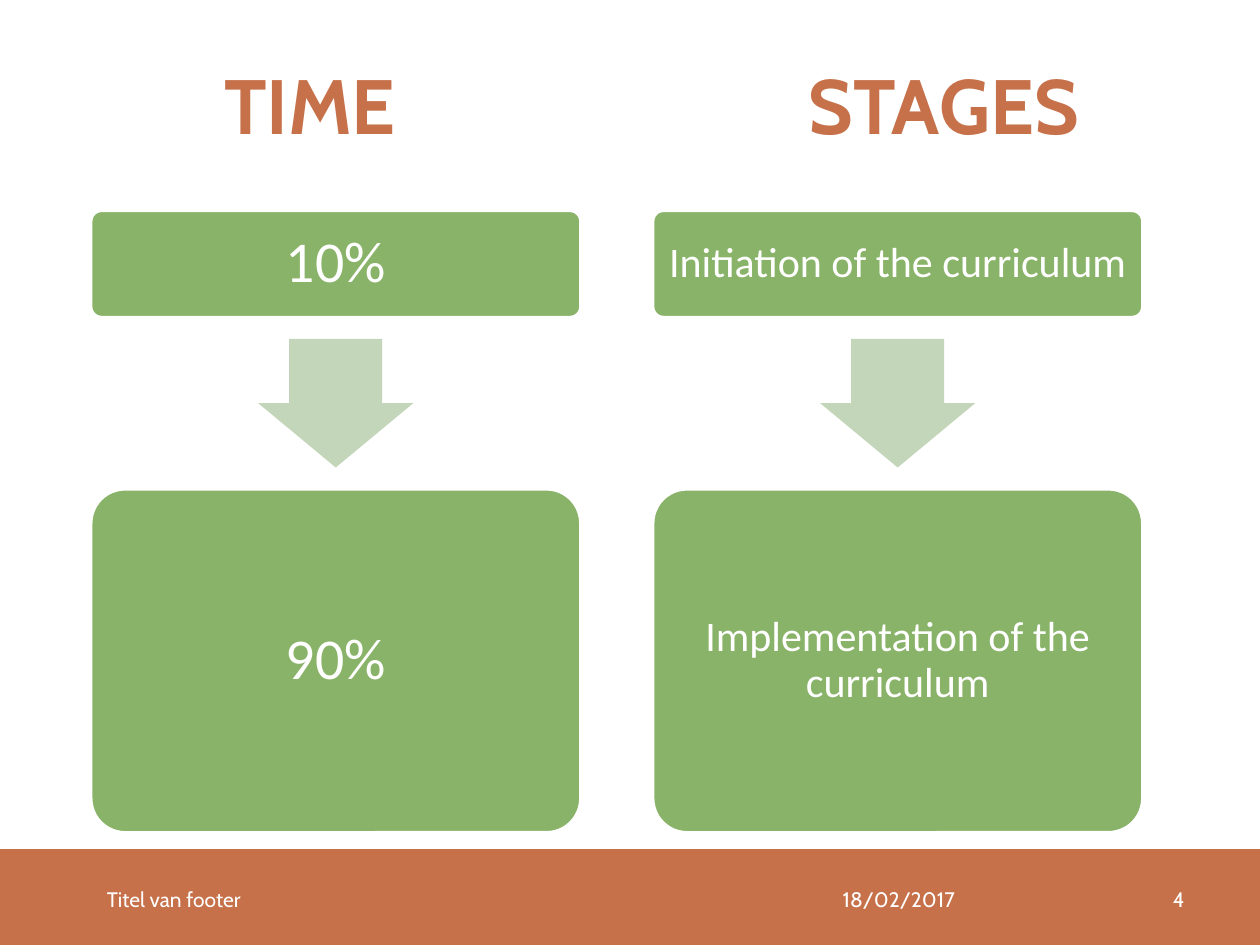
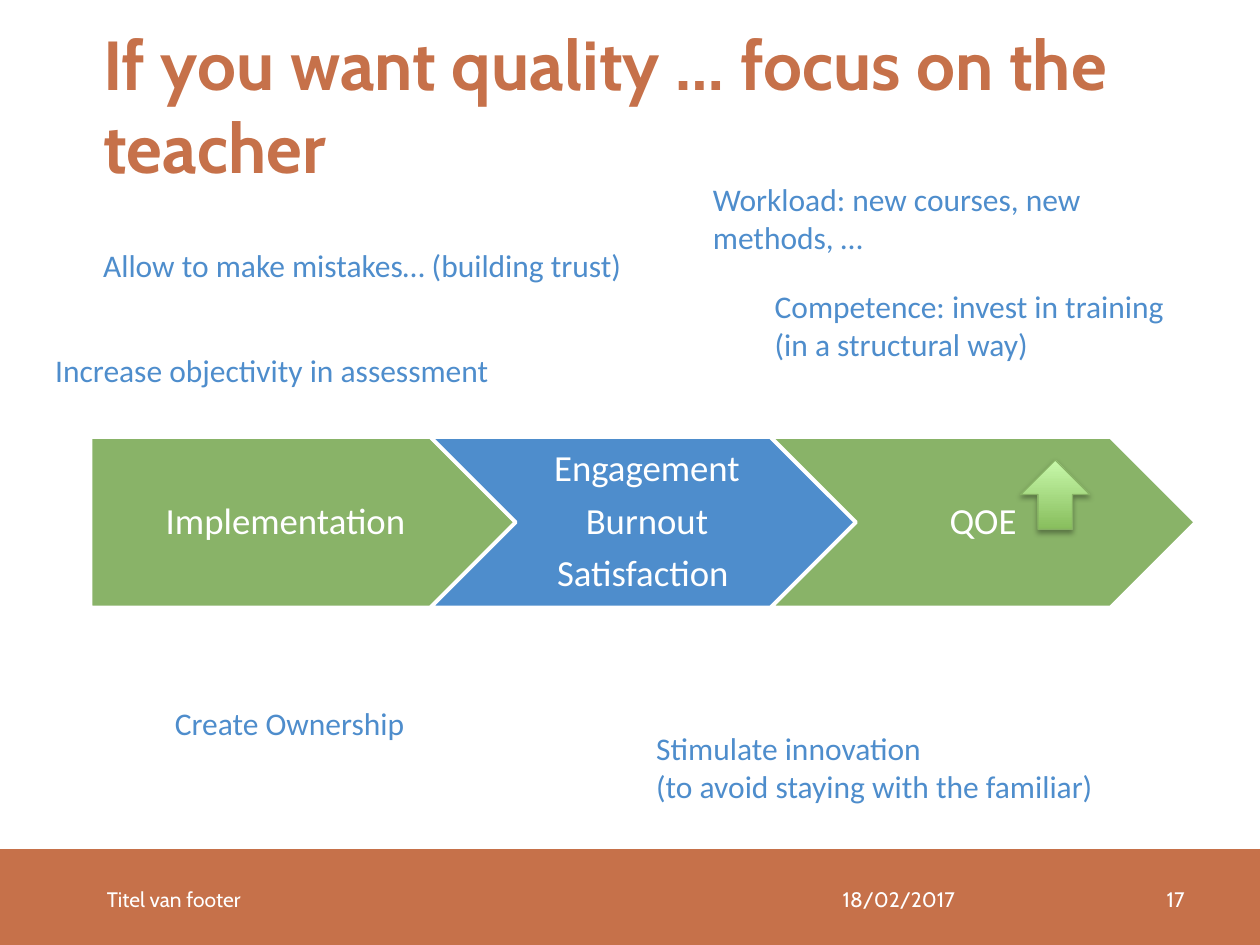
from dataclasses import dataclass

from lxml import etree
from pptx import Presentation
from pptx.dml.color import RGBColor
from pptx.enum.shapes import MSO_SHAPE as Shape
from pptx.enum.text import MSO_ANCHOR as Anchor, PP_ALIGN as Align
from pptx.oxml.ns import qn
from pptx.util import Inches, Pt


@dataclass(frozen=True)
class Theme:
    rust: str = "C6714A"
    green: str = "89B368"
    pale_green: str = "C4D6B9"
    blue: str = "4E8DCC"
    white: str = "FFFFFF"
    shadow: str = "000000"
    lift_dark: str = "88BE5D"
    lift_light: str = "C8F9AB"
    lift_edge: str = "86B164"
    heading_font: str = "Cabin"
    body_font: str = "Calibri"
    heading: float = 44
    long_heading: float = 39.6
    share: float = 33
    stage: float = 24
    step: float = 21
    note: float = 18
    footer: float = 12


@dataclass(frozen=True)
class Box:
    left: float
    top: float
    width: float
    height: float

    def lengths(self):
        return [Inches(n) for n in (self.left, self.top, self.width, self.height)]

    def inner(self, left, top, width, height):
        return Box(self.left + left, self.top + top, width, height)


THEME = Theme()
PAGE = Box(0, 0, 10, 7.5)
TITLE = Box(0.72, 0.2, 8.78, 1.25)
FOOTER = Box(0, 6.74, 10, 0.76)
TITLE_TEXT = {"name": THEME.heading_font, "bold": True}
FOOTER_TEXT = {"name": THEME.heading_font, "size": Pt(THEME.footer)}
LABEL_FRAME = {"word_wrap": True, "vertical_anchor": Anchor.MIDDLE}


def colour(value):
    return RGBColor.from_string(value)


def apply(target, values):
    for name, value in values.items():
        setattr(target, name, value)


def write(frame, lines, tint, font, layout=None):
    for index, line in enumerate(lines):
        para = frame.add_paragraph() if index else frame.paragraphs[0]
        para.text = line
        apply(para, layout or {})
        for span in para.runs:
            apply(span.font, font)
            span.font.color.rgb = colour(tint)


def add_text(page, box, text, tint, font, anchor=Anchor.MIDDLE, layout=None):
    frame = page.shapes.add_textbox(*box.lengths()).text_frame
    apply(frame, {"word_wrap": True, "vertical_anchor": anchor})
    write(frame, [text], tint, font, layout)
    return frame


def add_block(page, kind, box, fill, edge=None, adjustments=()):
    block = page.shapes.add_shape(kind, *box.lengths())
    block.shadow.inherit = False
    block.fill.solid()
    block.fill.fore_color.rgb = colour(fill)
    if edge:
        block.line.color.rgb = colour(edge)
        block.line.width = Pt(2)
    else:
        block.line.fill.background()
    for index, value in enumerate(adjustments):
        block.adjustments[index] = value
    return block


def label_block(block, lines, size, margins):
    frame = block.text_frame
    apply(frame, LABEL_FRAME)
    sides = ("margin_left", "margin_top", "margin_right", "margin_bottom")
    apply(frame, {side: Inches(gap) for side, gap in zip(sides, margins)})
    layout = {"alignment": Align.CENTER, "line_spacing": 0.9, "space_after": Pt(0.35 * size)}
    write(frame, lines, THEME.white, {"name": THEME.body_font, "size": Pt(size)}, layout)


def add_title(page, box, text, size, tabs=()):
    frame = add_text(page, box, text, THEME.rust, {**TITLE_TEXT, "size": Pt(size)})
    if tabs:
        properties = frame.paragraphs[0]._p.get_or_add_pPr()
        stops = etree.SubElement(properties, qn("a:tabLst"))
        for place in tabs:
            etree.SubElement(stops, qn("a:tab"), pos=str(Inches(place)), algn="l")


def add_footer(page, box, number):
    add_block(page, Shape.RECTANGLE, box, THEME.rust)
    fields = [
        (0.75, 5.79, "Titel van footer", Align.LEFT),
        (6.59, 2.33, "18/02/2017", Align.LEFT),
        (8.92, 0.58, str(number), Align.RIGHT),
    ]
    for left, width, text, side in fields:
        add_text(page, box.inner(left, 0.2, width, 0.4), text, THEME.white, FOOTER_TEXT,
                 layout={"alignment": side})


def add_flow_column(page, box, first, second, size):
    arrow_width, arrow_height = 1.23, 1.02
    first_height, second_height = 0.85, 2.73
    second_top = box.height - second_height
    arrow_top = (first_height + second_top - arrow_height) / 2
    arrow = box.inner((box.width - arrow_width) / 2, arrow_top, arrow_width, arrow_height)
    for text, top, height in ((first, 0, first_height), (second, second_top, second_height)):
        block = add_block(page, Shape.ROUNDED_RECTANGLE, box.inner(0, top, box.width, height),
                          THEME.green, THEME.white, [0.1])
        label_block(block, [text], size, [0.1] * 4)
    add_block(page, Shape.DOWN_ARROW, arrow, THEME.pale_green, adjustments=[0.6, 0.5])


def add_process(page, box):
    step_width, pitch = 3.37, 2.7
    steps = [
        (Shape.PENTAGON, THEME.green, ["Implementation"]),
        (Shape.CHEVRON, THEME.blue, ["Engagement", "Burnout", "Satisfaction "]),
        (Shape.CHEVRON, THEME.green, ["QOE "]),
    ]
    for index, (kind, fill, lines) in enumerate(steps):
        place = box.inner(index * pitch, 0, step_width, box.height)
        block = add_block(page, kind, place, fill, THEME.white)
        label_block(block, lines, THEME.step, [0.09, 0.06, 0.03, 0.06])
    add_lift_arrow(page, box.inner(7.38, 0.18, 0.55, 0.55))


def add_lift_arrow(page, box):
    arrow = add_block(page, Shape.UP_ARROW, box, THEME.lift_dark, THEME.lift_edge)
    arrow.line.width = Pt(0.75)
    arrow.fill.gradient()
    arrow.fill.gradient_angle = 90
    for stop, tint in zip(arrow.fill.gradient_stops, (THEME.lift_dark, THEME.lift_light)):
        stop.color.rgb = colour(tint)
    effects = arrow._element.spPr.find(qn("a:effectLst"))
    shadow = etree.SubElement(effects, qn("a:outerShdw"), blurRad=str(Pt(3.1)),
                              dist=str(Pt(1.8)), dir="5400000", rotWithShape="0")
    tint = etree.SubElement(shadow, qn("a:srgbClr"), val=THEME.shadow)
    etree.SubElement(tint, qn("a:alpha"), val="35000")


def add_notes_around(page, box):
    notes = [
        (5.11, 5.74, 4.1, 0.71, "Stimulate innovation\v(to avoid staying with the familiar)"),
        (0.72, 1.9, 4.68, 0.4, "Allow to make mistakes… (building trust)"),
        (6.05, 2.23, 3.9, 0.71, "Competence: invest in training\v(in a structural way)"),
        (1.29, 5.54, 4.1, 0.4, "Create Ownership"),
        (5.56, 1.38, 4.1, 0.71, "Workload: new courses, new methods, …"),
        (0.34, 2.74, 4.1, 0.4, "Increase objectivity in assessment"),
    ]
    font = {"name": THEME.body_font, "size": Pt(THEME.note)}
    for *place, text in notes:
        add_text(page, box.inner(*place), text, THEME.blue, font, Anchor.TOP)


def add_page(deck, number):
    page = deck.slides.add_slide(deck.slide_layouts[6])
    add_footer(page, FOOTER, number)
    return page


def build_stages_page(deck):
    page = add_page(deck, 4)
    add_title(page, TITLE, "\tTIME\tSTAGES", THEME.heading, tabs=(0.96, 5.6))
    columns = [
        ("10%", "90%", THEME.share),
        ("Initiation of the curriculum", "Implementation of the curriculum", THEME.stage),
    ]
    for index, (first, second, size) in enumerate(columns):
        add_flow_column(page, Box(0.72 + index * 4.46, 1.67, 3.89, 4.94), first, second, size)


def build_teacher_page(deck):
    page = add_page(deck, 17)
    add_title(page, TITLE, "If you want quality … focus on the teacher", THEME.long_heading)
    add_process(page, Box(0.72, 3.47, 8.77, 1.35))
    add_notes_around(page, PAGE)


def main():
    deck = Presentation()
    apply(deck, {"slide_width": Inches(PAGE.width), "slide_height": Inches(PAGE.height)})
    build_stages_page(deck)
    build_teacher_page(deck)
    deck.save("out.pptx")


if __name__ == "__main__":
    main()
